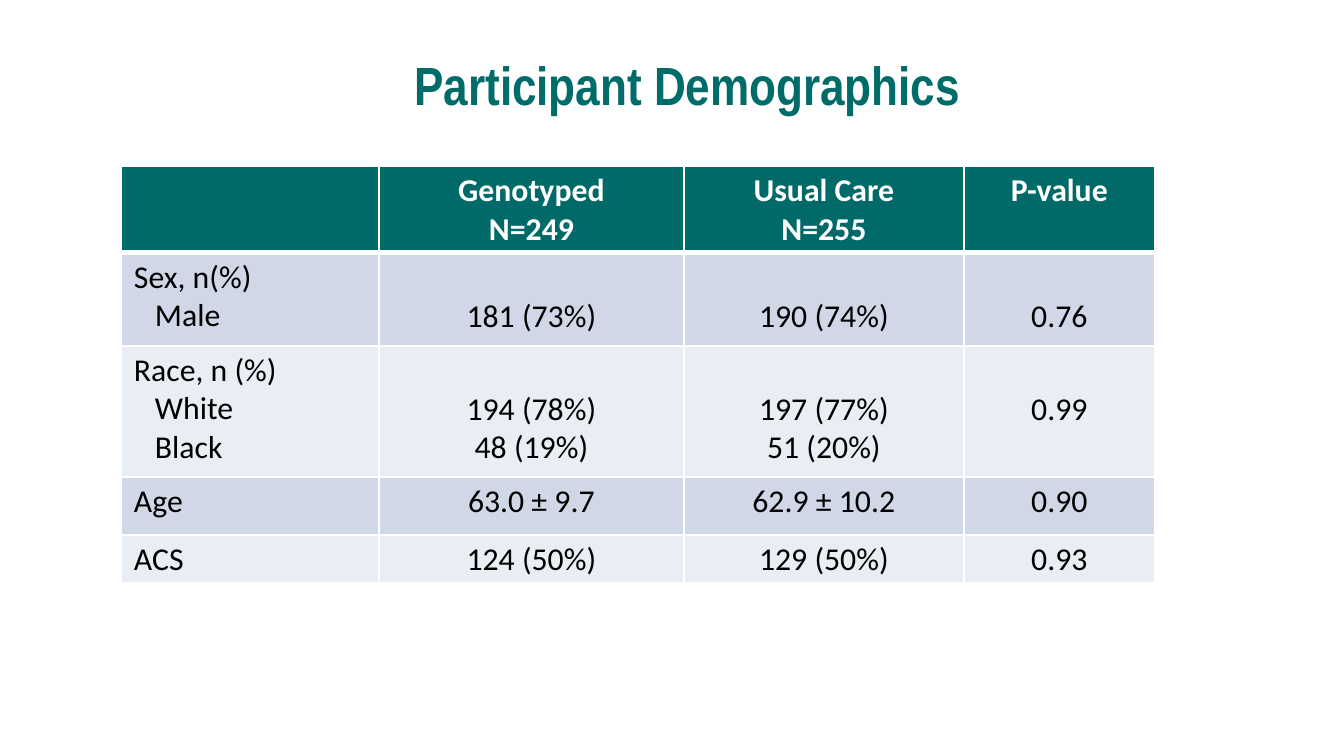
from dataclasses import dataclass

from lxml.etree import SubElement
from pptx import Presentation
from pptx.dml.color import RGBColor
from pptx.enum.text import MSO_ANCHOR, PP_ALIGN
from pptx.oxml.ns import qn
from pptx.util import Emu, Pt


@dataclass(frozen=True)
class Theme:
    """Colours, fonts and type sizes of the slide."""

    title: str = "006C69"
    header: str = "006A68"
    bands: tuple = ("D0D8E8", "E9EDF4")
    rule: str = "FFFFFF"
    header_text: str = "FFFFFF"
    body_text: str = "000000"
    title_font: str = "Arial Narrow"
    body_font: str = "Calibri"
    title_size: float = 28.8
    body_size: float = 17


THEME = Theme()
PX_PER_INCH = 134.4
SLIDE_SIZE = (1344, 756)
TITLE_BOX = (67, 42, 1241, 83)
TABLE_ORIGIN = (121, 166)
COLUMN_WIDTHS = (258, 305, 280, 191)
ROW_HEIGHTS = (87, 93, 131, 58, 48)
SIDE_INSET, TOP_INSET = 13, 5
LINE_HEIGHT, CATEGORY_INDENT = 39, 21
THIN_RULE, THICK_RULE = 1, 3

HEADINGS = ([], ["Genotyped", "N=249"], ["Usual Care", "N=255"], ["P-value"])
MEASURES = (
    (["Sex, n(%)", "Male"], ["181 (73%)"], ["190 (74%)"], ["0.76"]),
    (["Race, n (%)", "White", "Black"], ["194 (78%)", "48 (19%)"],
     ["197 (77%)", "51 (20%)"], ["0.99"]),
    (["Age"], ["63.0 ± 9.7"], ["62.9 ± 10.2"], ["0.90"]),
    (["ACS"], ["124 (50%)"], ["129 (50%)"], ["0.93"]),
)


def px(length):
    """Turn a pixel length into EMU."""
    return Emu(round(length * 914400 / PX_PER_INCH))


def apply_format(target, values):
    """Set each named attribute on the target."""
    for name, value in values.items():
        setattr(target, name, value)


def write_lines(frame, lines, align, color, font_format, indent=0):
    """Write one paragraph per line, indenting those after the first."""
    for position, line in enumerate(lines):
        paragraph = frame.add_paragraph() if position else frame.paragraphs[0]
        paragraph.alignment = align
        if position and indent:
            paragraph._p.get_or_add_pPr().set("marL", str(px(indent)))
        run = paragraph.add_run()
        run.text = line
        apply_format(run.font, font_format)
        run.font.color.rgb = RGBColor.from_string(color)


def add_title(slide, wording):
    """Add the centred slide title."""
    title = slide.shapes.add_textbox(*map(px, TITLE_BOX))
    apply_format(title.text_frame, {
        "word_wrap": True, "vertical_anchor": MSO_ANCHOR.MIDDLE})
    write_lines(title.text_frame, [wording], PP_ALIGN.CENTER, THEME.title, {
        "name": THEME.title_font, "size": Pt(THEME.title_size), "bold": True})


def rule_cell(cell, top, bottom):
    """Draw the four borders of a cell."""
    properties = cell._tc.get_or_add_tcPr()
    widths = {"lnL": THIN_RULE, "lnR": THIN_RULE, "lnT": top, "lnB": bottom}
    for side, width in widths.items():
        border = SubElement(properties, qn(f"a:{side}"), w=str(Pt(width)))
        fill = SubElement(border, qn("a:solidFill"))
        SubElement(fill, qn("a:srgbClr"), val=THEME.rule)


def fill_cell(cell, lines, row, column, lead_lines):
    """Write and style one table cell."""
    is_header = row == 0
    rule_cell(cell, THICK_RULE if row == 1 else THIN_RULE,
              THICK_RULE if is_header else THIN_RULE)
    cell.fill.solid()
    fill = THEME.header if is_header else THEME.bands[(row - 1) % 2]
    cell.fill.fore_color.rgb = RGBColor.from_string(fill)
    apply_format(cell, {
        "margin_left": px(SIDE_INSET), "margin_right": px(SIDE_INSET),
        "margin_top": px(TOP_INSET + lead_lines * LINE_HEIGHT),
        "margin_bottom": px(TOP_INSET), "vertical_anchor": MSO_ANCHOR.TOP})
    write_lines(
        cell.text_frame, lines,
        PP_ALIGN.CENTER if is_header or column else PP_ALIGN.LEFT,
        THEME.header_text if is_header else THEME.body_text,
        {"name": THEME.body_font, "size": Pt(THEME.body_size), "bold": is_header},
        0 if column else CATEGORY_INDENT)


def add_demographics(slide):
    """Add the table comparing the two study arms."""
    rows = (HEADINGS, *MEASURES)
    table = slide.shapes.add_table(
        len(rows), len(HEADINGS), *map(px, TABLE_ORIGIN),
        px(sum(COLUMN_WIDTHS)), px(sum(ROW_HEIGHTS))).table
    table.horz_banding = False
    for column, width in zip(table.columns, COLUMN_WIDTHS):
        column.width = px(width)
    for row, height in zip(table.rows, ROW_HEIGHTS):
        row.height = px(height)
    for row, entries in enumerate(rows):
        has_categories = len(entries[0]) > 1
        for column, lines in enumerate(entries):
            lead_lines = int(has_categories and column > 0)
            fill_cell(table.cell(row, column), lines, row, column, lead_lines)


def main():
    """Build and save the slide."""
    presentation = Presentation()
    width, height = map(px, SLIDE_SIZE)
    apply_format(presentation, {"slide_width": width, "slide_height": height})
    slide = presentation.slides.add_slide(presentation.slide_layouts[6])
    add_title(slide, "Participant Demographics")
    add_demographics(slide)
    presentation.save("out.pptx")


if __name__ == "__main__":
    main()
